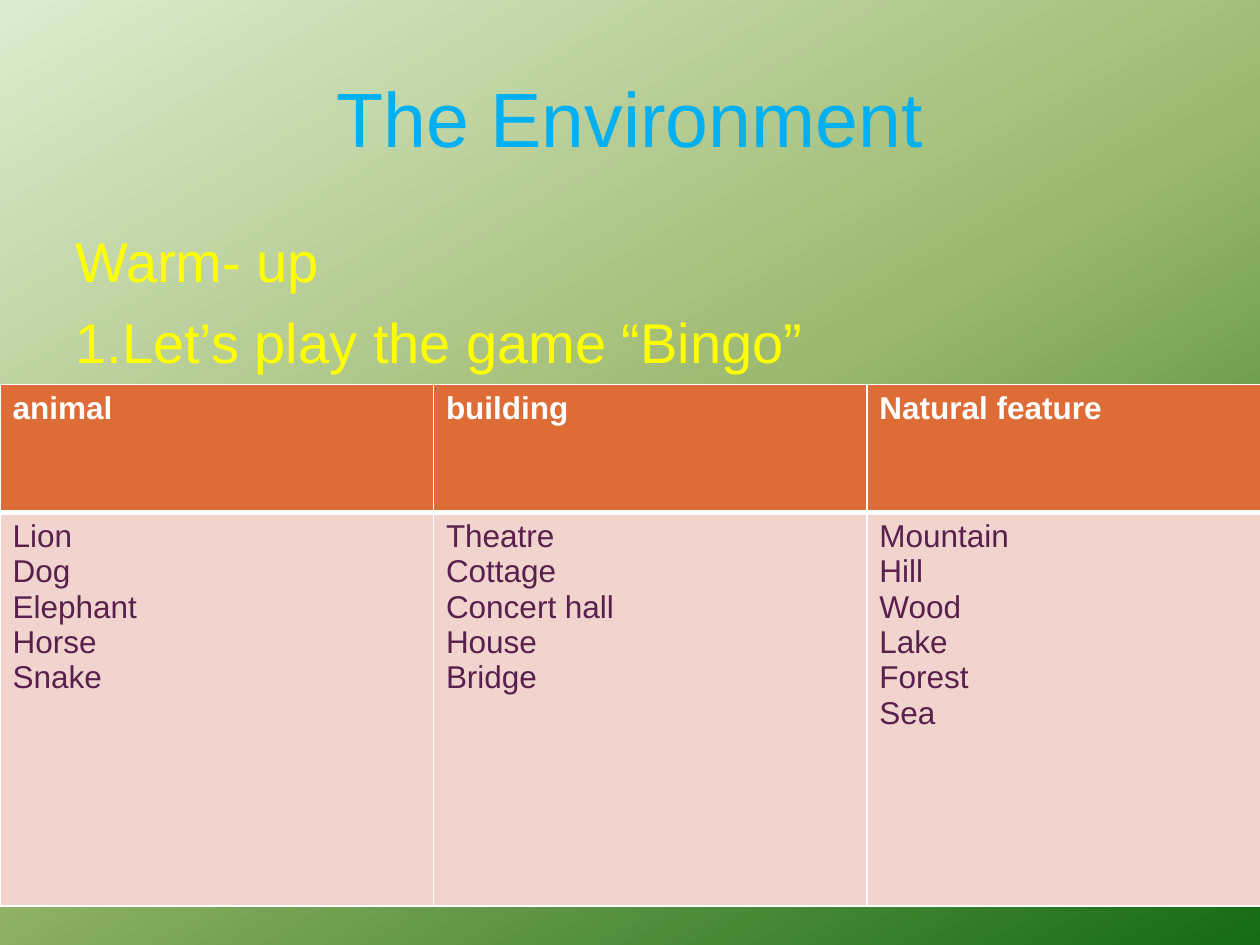
import pptx
import pptx.dml.color
import pptx.enum.text
import pptx.oxml
import pptx.oxml.ns
import pptx.util

Inches, Pt = pptx.util.Inches, pptx.util.Pt
ALIGN = pptx.enum.text.PP_ALIGN
ANCHOR = pptx.enum.text.MSO_ANCHOR
qn = pptx.oxml.ns.qn

# Content
TITLE = "The Environment"
WARM_UP = ["Warm- up", "1.Let’s play the game “Bingo”"]
WORDS = {
    "animal": ["Lion", "Dog", "Elephant", "Horse", "Snake"],
    "building": ["Theatre", "Cottage", "Concert hall", "House", "Bridge"],
    "Natural feature": ["Mountain", "Hill", "Wood", "Lake", "Forest", "Sea"],
}

# Formats
TITLE_FONT = {"name": "Arial", "size": Pt(44), "color": "00B0F0"}
BODY_FONT = {"name": "Arial", "size": Pt(32), "color": "FFFF00"}
HEAD_FONT = {"name": "Arial", "size": Pt(18), "bold": True, "color": "FFFFFF"}
WORD_FONT = {"name": "Arial", "size": Pt(18), "bold": False, "color": "591F4D"}
GRADIENT = [(0, "DDEBCF"), (50, "9CB86E"), (100, "156B13")]
ANGLE = 60
COL_WIDTH, ROW_HEIGHTS = 3.44, [1.02, 3.12]


def rgb(value):
    return pptx.dml.color.RGBColor.from_string(value)


def element(xml):
    return pptx.oxml.parse_xml(xml.replace(">", f" {pptx.oxml.ns.nsdecls('a')}>", 1))


def write(tf, lines, font):
    for i, line in enumerate(lines):
        p = tf.paragraphs[0] if i == 0 else tf.add_paragraph()
        r = p.add_run()
        r.text = line
        for key, value in font.items():
            if key == "color":
                r.font.color.rgb = rgb(value)
            else:
                setattr(r.font, key, value)


def add_text(s, box, lines, font, anchor):
    tf = s.shapes.add_textbox(*map(Inches, box)).text_frame
    tf.word_wrap = True
    tf.vertical_anchor = anchor
    write(tf, lines, font)
    return tf


def set_borders(cell, widths):
    tcPr = cell._tc.get_or_add_tcPr()
    for i, (side, width) in enumerate(widths.items()):
        tcPr.insert(i, element(
            f'<a:ln{side} w="{Pt(width)}"><a:solidFill><a:srgbClr val="FFFFFF"/>'
            f'</a:solidFill></a:ln{side}>'))


prs = pptx.Presentation()
prs.slide_width, prs.slide_height = Inches(10), Inches(7.5)
s = prs.slides.add_slide(prs.slide_layouts[6])

# Background gradient
s.background.fill.gradient()
grad = next(s.element.iter(qn("a:gradFill")))
for child in list(grad):
    grad.remove(child)
stops = "".join(f'<a:gs pos="{pos * 1000}"><a:srgbClr val="{color}"/></a:gs>'
                for pos, color in GRADIENT)
grad.append(element(f"<a:gsLst>{stops}</a:gsLst>"))
grad.append(element(f'<a:lin ang="{ANGLE * 60000}" scaled="0"></a:lin>'))

# Title and warm-up lines
tf = add_text(s, (0.5, 0.3, 9, 1.25), [TITLE], TITLE_FONT, ANCHOR.MIDDLE)
tf.paragraphs[0].alignment = ALIGN.CENTER
tf = add_text(s, (0.5, 1.75, 9, 4.27), WARM_UP, BODY_FONT, ANCHOR.TOP)
for p in tf.paragraphs:
    pPr = p._p.get_or_add_pPr()
    pPr.set("marL", str(Inches(0.38)))
    pPr.set("indent", str(-Inches(0.38)))
for p in tf.paragraphs[1:]:
    p.space_before = Pt(7.5)

# Word table
table = s.shapes.add_table(
    len(ROW_HEIGHTS), len(WORDS), Inches(0), Inches(3.05),
    Inches(COL_WIDTH * len(WORDS)), Inches(sum(ROW_HEIGHTS))).table
for row, height in zip(table.rows, ROW_HEIGHTS):
    row.height = Inches(height)
for c, (heading, words) in enumerate(WORDS.items()):
    table.columns[c].width = Inches(COL_WIDTH)
    rows = [([heading], HEAD_FONT, "DE6C36", {"L": 1, "R": 1, "T": 1, "B": 3}),
            (words, WORD_FONT, "F2D4CE", {"L": 1, "R": 1, "T": 3, "B": 1})]
    for r, (lines, font, fill, borders) in enumerate(rows):
        cell = table.cell(r, c)
        cell.fill.solid()
        cell.fill.fore_color.rgb = rgb(fill)
        set_borders(cell, borders)
        write(cell.text_frame, lines, font)

prs.save("out.pptx")
